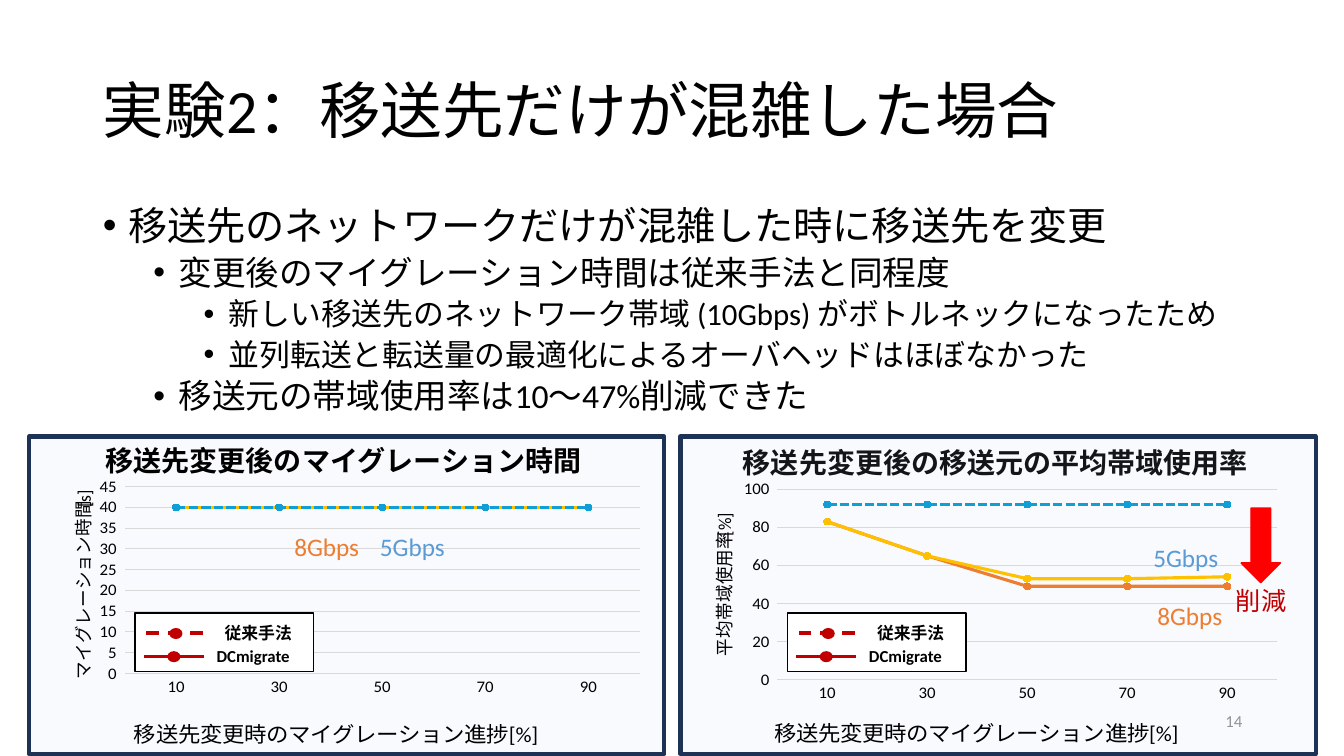
"""Build the slide on migration when only the destination network is congested."""
import pptx
import pptx.chart.data
import pptx.dml.color
import pptx.enum.chart
import pptx.enum.dml
import pptx.enum.shapes
import pptx.enum.text
import pptx.oxml
import pptx.oxml.ns
import pptx.util

Inches = pptx.util.Inches
Pt = pptx.util.Pt
RGBColor = pptx.dml.color.RGBColor
SHAPE = pptx.enum.shapes.MSO_SHAPE
DASH = pptx.enum.dml.MSO_LINE
ALIGN = pptx.enum.text.PP_ALIGN
ANCHOR = pptx.enum.text.MSO_ANCHOR
AUTO = pptx.enum.text.MSO_AUTO_SIZE
qn = pptx.oxml.ns.qn

BLACK = RGBColor(0, 0, 0)
WHITE = RGBColor(0xFF, 0xFF, 0xFF)
GRAY = RGBColor(0x8C, 0x8C, 0x8C)
GRID = RGBColor(0xD9, 0xD9, 0xD9)
NAVY = RGBColor(0x1E, 0x32, 0x56)
PALE = RGBColor(0xBD, 0xD7, 0xEE)
ORANGE = RGBColor(0xED, 0x7D, 0x31)
RUST = RGBColor(0xE9, 0x71, 0x32)
GOLD = RGBColor(0xFF, 0xC0, 0x00)
CYAN = RGBColor(0x0F, 0x9E, 0xD5)
BLUE = RGBColor(0x5B, 0x9B, 0xD5)
RED = RGBColor(0xFF, 0, 0)
DARK_RED = RGBColor(0xC0, 0, 0)

BULLETS = [
    (0, 28, "移送先のネットワークだけが混雑した時に移送先を変更"),
    (1, 24, "変更後のマイグレーション時間は従来手法と同程度"),
    (2, 22, "新しい移送先のネットワーク帯域 (10Gbps) がボトルネックになったため"),
    (2, 22, "並列転送と転送量の最適化によるオーバヘッドはほぼなかった"),
    (1, 24, "移送元の帯域使用率は10～47%削減できた"),
]
PROGRESS = ["10", "30", "50", "70", "90"]
SERIES_STYLE = [(ORANGE, None), (RUST, DASH.SQUARE_DOT), (GOLD, None), (CYAN, DASH.SQUARE_DOT)]
TIMES = [[40] * 5] * 4
USAGE = [[83, 65, 49, 49, 49], [92] * 5, [83, 65, 53, 53, 54], [92] * 5]


def add_run(p, text, size=18, color=BLACK, bold=False, font="Calibri"):
    r = p.add_run()
    r.text = text
    r.font.name, r.font.size, r.font.bold = font, Pt(size), bold
    r.font.color.rgb = color
    return r


def set_layout(parent, index, inner=False, **fractions):
    old = parent.find(qn("c:layout"))
    if old is not None:
        index = parent.index(old)
        parent.remove(old)
    layout = pptx.oxml.parse_xml(
        '<c:layout xmlns:c="http://schemas.openxmlformats.org/drawingml/2006/chart"><c:manualLayout/></c:layout>')
    items = [("layoutTarget", "inner")] if inner else []
    items += [("xMode", "edge"), ("yMode", "edge"), *fractions.items()]
    for name, value in items:
        layout[0].append(layout.makeelement(qn("c:" + name), {"val": str(value)}))
    parent.insert(index, layout)


class SlideBuilder:
    def __init__(self, slide):
        self.slide = slide
        self.shapes = slide.shapes

    def box(self, x, y, w, h):
        return [Inches(v) for v in (x, y, w, h)]

    def place(self, sp, x, y, w, h, anchor):
        sp.left, sp.top, sp.width, sp.height = self.box(x, y, w, h)
        tf = sp.text_frame
        tf.auto_size = AUTO.NONE
        tf.vertical_anchor = anchor
        return tf

    def title(self, text):
        tf = self.place(self.shapes.title, 0.92, 0.4, 11.28, 1.45, ANCHOR.MIDDLE)
        p = tf.paragraphs[0]
        p.alignment, p.line_spacing = ALIGN.LEFT, 0.9
        add_run(p, text, size=44)

    def bullets(self, items):
        tf = self.place(self.slide.placeholders[1], 0.92, 2, 11.5, 2.57, ANCHOR.TOP)
        for i, (level, size, text) in enumerate(items):
            p = tf.add_paragraph() if i else tf.paragraphs[0]
            p.level, p.line_spacing = level, 0.9
            p.space_before = Pt(5 if level else 10)
            pPr = p._p.get_or_add_pPr()
            pPr.set("marL", str(Inches(0.25 + 0.5 * level)))
            pPr.set("indent", str(Inches(-0.25)))
            for tag, attrs in (("a:buFont", {"typeface": "Arial"}), ("a:buChar", {"char": "•"})):
                pPr.append(pPr.makeelement(qn(tag), attrs))
            add_run(p, text, size=size)

    def text(self, x, y, w, h, text, align=ALIGN.LEFT, **fmt):
        tf = self.shapes.add_textbox(*self.box(x, y, w, h)).text_frame
        tf.word_wrap = align == ALIGN.RIGHT
        if align == ALIGN.RIGHT:
            tf.vertical_anchor = ANCHOR.MIDDLE
        p = tf.paragraphs[0]
        p.alignment = align
        add_run(p, text, **fmt)

    def shape(self, kind, x, y, w, h, fill, line=None, width=1, alpha=None):
        sp = self.shapes.add_shape(kind, *self.box(x, y, w, h))
        sp.shadow.inherit = False
        sp.fill.solid()
        sp.fill.fore_color.rgb = fill
        if alpha:
            color = sp._element.spPr.find(qn("a:solidFill"))[0]
            color.append(color.makeelement(qn("a:alpha"), {"val": str(alpha * 1000)}))
        if line is None:
            sp.line.fill.background()
        else:
            sp.line.color.rgb, sp.line.width = line, Pt(width)

    def line(self, x, y, length, color, dash=None):
        kind = pptx.enum.shapes.MSO_CONNECTOR.STRAIGHT
        sp = self.shapes.add_connector(kind, Inches(x), Inches(y), Inches(x + length), Inches(y))
        sp.line.color.rgb, sp.line.width = color, Pt(2.25)
        if dash:
            sp.line.dash_style = dash
        spPr = sp._element.spPr
        spPr.append(spPr.makeelement(qn("a:effectLst"), {}))

    def panel(self, x):
        self.shape(SHAPE.RECTANGLE, x, 4.33, 6.3, 3.15, PALE, NAVY, 3, alpha=10)

    def axis(self, axis, title, size, x, y):
        axis.major_tick_mark = axis.minor_tick_mark = pptx.enum.chart.XL_TICK_MARK.NONE
        font = axis.tick_labels.font
        font.name, font.size, font.color.rgb = "Calibri", Pt(12), BLACK
        tf = axis.axis_title.text_frame
        add_run(tf.paragraphs[0], title, size=size)
        set_layout(axis.axis_title._element, 1, x=x, y=y)
        return tf

    def chart(self, x, y, rows, value_title, title_at, plot, top, step):
        data = pptx.chart.data.CategoryChartData()
        data.categories = PROGRESS
        for i, row in enumerate(rows, 1):
            data.add_series(f"Series {i}", row)
        kind = pptx.enum.chart.XL_CHART_TYPE.LINE_MARKERS
        chart = self.shapes.add_chart(kind, *self.box(x, y, 5.91, 2.76), data).chart
        chart.has_legend = chart.has_title = False
        chart.font.name, chart.font.size = "Calibri", Pt(10)
        chart.plots[0].vary_by_categories = False
        set_layout(chart._chartSpace.chart.plotArea, 0, True, **dict(zip("xywh", plot)))
        cat, val = chart.category_axis, chart.value_axis
        self.axis(cat, "移送先変更時のマイグレーション進捗[%]", 16, 0.13, 0.88)
        cat.format.line.color.rgb, cat.format.line.width = GRID, Pt(0.75)
        tf = self.axis(val, value_title, 13, *title_at)
        tf._txBody.bodyPr.set("rot", "-5400000")
        tf._txBody.bodyPr.set("vert", "horz")
        val.format.line.fill.background()
        val.minimum_scale, val.maximum_scale, val.major_unit = 0, top, step
        val.tick_labels.number_format, val.tick_labels.number_format_is_linked = "0_ ", False
        grid = val.major_gridlines.format.line
        grid.color.rgb, grid.width = GRID, Pt(0.75)
        for series, (color, dash) in zip(chart.plots[0].series, SERIES_STYLE):
            series.smooth = False
            ln = series.format.line
            ln.color.rgb, ln.width = color, Pt(2.25)
            if dash:
                ln.dash_style = dash
            marker = series.marker
            marker.style, marker.size = pptx.enum.chart.XL_MARKER_STYLE.CIRCLE, 5
            marker.format.fill.solid()
            marker.format.fill.fore_color.rgb = marker.format.line.color.rgb = color

    def legend(self, x):
        self.shape(SHAPE.RECTANGLE, x, 6.08, 1.77, 0.58, WHITE, BLACK)
        for dx, y, text_dx, name, dash in ((0.11, 6.28, 0.79, "従来手法", DASH.DASH),
                                           (0.09, 6.51, 0.71, "DCmigrate", None)):
            self.line(x + dx, y, 0.59, DARK_RED, dash)
            self.shape(SHAPE.OVAL, x + dx + 0.23, y - 0.05, 0.13, 0.11, DARK_RED)
            self.text(x + text_dx, y - 0.15, 0.95, 0.3, name, size=12, bold=True)


def main():
    prs = pptx.Presentation()
    prs.slide_width, prs.slide_height = Inches(13.33), Inches(7.5)
    s = SlideBuilder(prs.slides.add_slide(prs.slide_layouts[1]))
    s.title("実験2：移送先だけが混雑した場合")
    s.bullets(BULLETS)
    s.panel(0.29)
    s.text(0.95, 4.35, 4.97, 0.44, "移送先変更後のマイグレーション時間", size=20, bold=True)
    s.chart(0.52, 4.73, TIMES, "マイグレーション時間[s]", (0.02, 0.04), (0.121, 0.037, 0.865, 0.7), 45, 5)
    s.text(9.42, 6.95, 3, 0.4, "14", align=ALIGN.RIGHT, size=12, color=GRAY)
    s.text(7.27, 4.37, 5.25, 0.44, "移送先変更後の移送元の平均帯域使用率", size=20, bold=True)
    s.panel(6.75)
    s.chart(6.87, 4.72, USAGE, "平均帯域使用率[%]", (0.02, 0.13), (0.142, 0.051, 0.839, 0.712), 100, 20)
    for x, y, name, color in ((3.67, 5.22, "5Gbps", BLUE), (2.82, 5.22, "8Gbps", ORANGE),
                              (11.38, 5.91, "8Gbps", ORANGE), (11.34, 5.33, "5Gbps", BLUE),
                              (12.16, 5.76, "削減", DARK_RED)):
        s.text(x, y, 0.85, 0.4, name, color=color)
    s.shape(SHAPE.DOWN_ARROW, 12.31, 5.04, 0.39, 0.74, RED, RED)
    for x in (1.34, 7.81):
        s.legend(x)
    prs.save("out.pptx")


if __name__ == "__main__":
    main()
